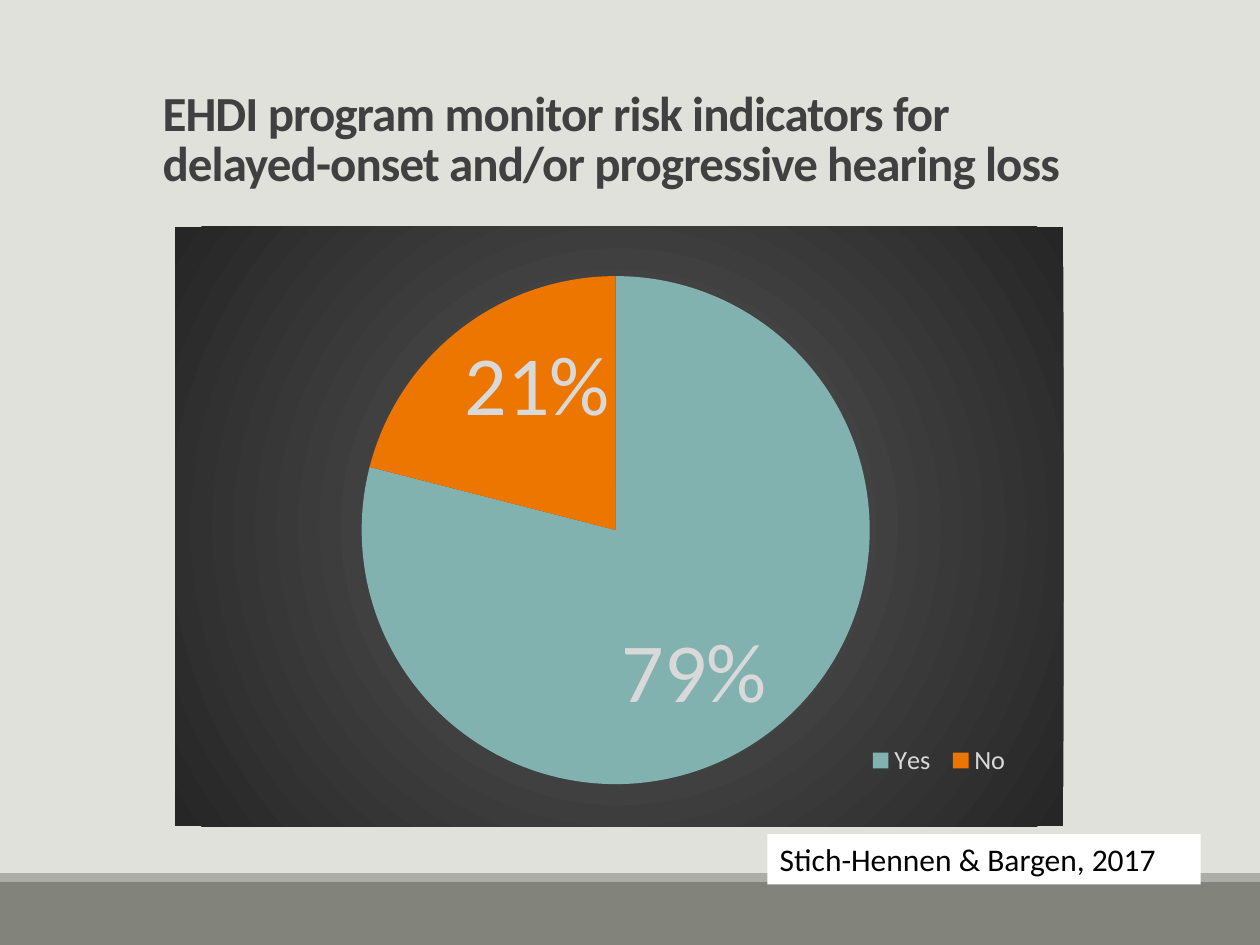
from lxml import etree
from pptx import Presentation
from pptx.chart.data import CategoryChartData
from pptx.dml.color import RGBColor
from pptx.enum.chart import XL_CHART_TYPE, XL_LABEL_POSITION, XL_LEGEND_POSITION
from pptx.enum.shapes import MSO_SHAPE
from pptx.enum.text import MSO_ANCHOR, MSO_AUTO_SIZE, PP_ALIGN
from pptx.oxml import parse_xml
from pptx.oxml.ns import qn
from pptx.util import Inches, Pt

PIE = XL_CHART_TYPE.PIE
INSIDE = XL_LABEL_POSITION.INSIDE_END
BELOW = XL_LEGEND_POSITION.BOTTOM
RECT = MSO_SHAPE.RECTANGLE
LEFT = PP_ALIGN.LEFT
BOTTOM, MIDDLE = MSO_ANCHOR.BOTTOM, MSO_ANCHOR.MIDDLE
FIXED = MSO_AUTO_SIZE.NONE

PAPER = RGBColor(0xE1, 0xE1, 0xDB)
STONE = RGBColor(0x82, 0x84, 0x7C)
ASH = RGBColor(0xAC, 0xAD, 0xA8)
WHITE = RGBColor(0xFF, 0xFF, 0xFF)
BLACK = RGBColor(0, 0, 0)
INK = RGBColor(0x40, 0x40, 0x40)
PALE = RGBColor(0xD9, 0xD9, 0xD9)
TEAL = RGBColor(0x82, 0xB2, 0xB0)
ORANGE = RGBColor(0xEC, 0x76, 0x00)

GLOW = """<c:spPr xmlns:c="http://schemas.openxmlformats.org/drawingml/2006/chart"
 xmlns:a="http://schemas.openxmlformats.org/drawingml/2006/main">
<a:gradFill><a:gsLst>
<a:gs pos="0"><a:srgbClr val="595959"/></a:gs>
<a:gs pos="100000"><a:srgbClr val="262626"/></a:gs>
</a:gsLst><a:path path="circle">
<a:fillToRect l="50000" t="50000" r="50000" b="50000"/>
</a:path></a:gradFill><a:ln><a:noFill/></a:ln></c:spPr>"""


def style(font, size, color, bold=False):
    look = {"name": "Calibri", "size": Pt(size), "bold": bold}
    for key, value in look.items():
        setattr(font, key, value)
    font.color.rgb = color


def place(part, index, box, inner=False):
    for old in part.findall(qn("c:layout")):
        part.remove(old)
    layout = etree.Element(qn("c:layout"))
    part.insert(index, layout)
    manual = etree.SubElement(layout, qn("c:manualLayout"))
    rules = [("layoutTarget", "inner")] if inner else []
    rules += [("xMode", "edge"), ("yMode", "edge"), *zip("xywh", box)]
    for tag, value in rules:
        etree.SubElement(manual, qn("c:" + tag)).set("val", str(value))


prs = Presentation()
prs.slide_width, prs.slide_height = Inches(10), Inches(7.5)
slide = prs.slides.add_slide(prs.slide_layouts[5])
slide.background.fill.solid()
slide.background.fill.fore_color.rgb = PAPER

boxes = []
for x, y, w, h, color in (
    (0, 7, 10, 0.5, STONE),
    (0, 6.93, 10, 0.07, ASH),
    (6.09, 6.62, 3.44, 0.4, WHITE),
):
    box = slide.shapes.add_shape(RECT, Inches(x), Inches(y), Inches(w), Inches(h))
    box.shadow.inherit = False
    box.fill.solid()
    box.fill.fore_color.rgb = color
    box.line.fill.background()
    boxes.append(box)

title = slide.shapes.title
spot = {"left": 1.19, "top": 0.4, "width": 7.75, "height": 1.17}
for key, value in spot.items():
    setattr(title, key, Inches(value))

for shape, text, size, color, bold, anchor in (
    (title, "EHDI program monitor risk indicators for delayed-onset and/or progressive hearing loss",
     28, INK, True, BOTTOM),
    (boxes[-1], "Stich-Hennen & Bargen, 2017", 18, BLACK, False, MIDDLE),
):
    frame = shape.text_frame
    frame.text = text
    frame.word_wrap = True
    frame.auto_size = FIXED
    frame.vertical_anchor = anchor
    para = frame.paragraphs[0]
    para.alignment = LEFT
    style(para.runs[0].font, size, color, bold)

head = title.text_frame.paragraphs[0]
head.line_spacing = 0.85
head.runs[0].font._element.set("spc", "-50")

data = CategoryChartData()
data.categories = ["Yes", "No"]
data.add_series("Series 1", (79, 21))
chart = slide.shapes.add_chart(
    PIE, Inches(1.39), Inches(1.8), Inches(7.05), Inches(4.76), data
).chart
chart.has_title = False
style(chart.font, 10, BLACK)
root = chart._chartSpace
root.find(qn("c:chart")).addnext(parse_xml(GLOW))

plot = chart.plots[0]
plot.vary_by_categories = True
place(root.chart.plotArea, 0, (0.21, 0.082, 0.572, 0.848), True)
for index, color in enumerate((TEAL, ORANGE)):
    part = plot.series[0].points[index].format
    part.fill.solid()
    part.fill.fore_color.rgb = color
    part.line.fill.background()

labels = plot.series[0].data_labels
show = {"show_percentage": True, "show_value": False, "position": INSIDE}
for key, value in show.items():
    setattr(labels, key, value)
style(labels.font, 48, PALE)

chart.has_legend = True
legend = chart.legend
legend.position = BELOW
legend.include_in_layout = False
style(legend.font, 15, PALE)
place(legend._element, 1, (0.77, 0.85, 0.18, 0.08))

prs.save("out.pptx")
